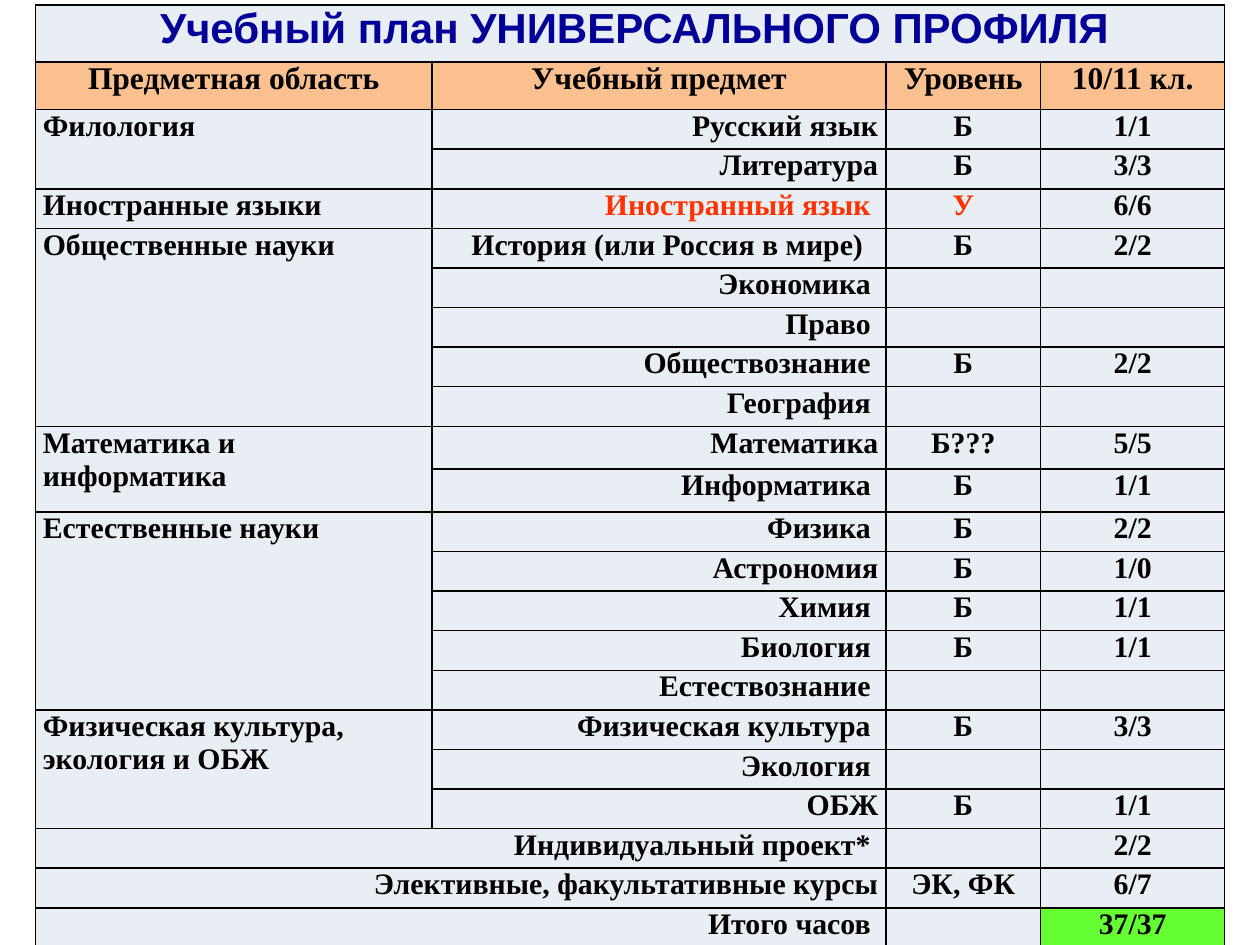
from lxml import etree
from pptx import Presentation
from pptx import util as u
from pptx.dml.color import RGBColor
from pptx.enum import text
from pptx.oxml import ns

BLACK = RGBColor(0x00, 0x00, 0x00)
NAVY = RGBColor(0x00, 0x00, 0x99)
RED = RGBColor(0xFF, 0x33, 0x00)
PALE = RGBColor(0xE9, 0xED, 0xF4)
ORANGE = RGBColor(0xFA, 0xC0, 0x90)
GREEN = RGBColor(0x66, 0xFF, 0x33)
LEFT, CENTER, RIGHT = text.PP_ALIGN.LEFT, text.PP_ALIGN.CENTER, text.PP_ALIGN.RIGHT

TITLE = "Учебный план УНИВЕРСАЛЬНОГО ПРОФИЛЯ"
HEADERS = ["Предметная область", "Учебный предмет", "Уровень", "10/11 кл."]
# Subject area: (subject, level, hours in grades 10/11)
AREAS = {
    "Филология": [("Русский язык", "Б", "1/1"), ("Литература", "Б", "3/3")],
    "Иностранные языки": [("Иностранный язык ", "У", "6/6")],
    "Общественные науки": [
        ("История (или Россия в мире) ", "Б", "2/2"),
        ("Экономика ", "", ""),
        ("Право ", "", ""),
        ("Обществознание ", "Б", "2/2"),
        ("География ", "", ""),
    ],
    "Математика и информатика": [("Математика", "Б???", "5/5"), ("Информатика ", "Б", "1/1")],
    "Естественные науки": [
        ("Физика ", "Б", "2/2"),
        ("Астрономия", "Б", "1/0"),
        ("Химия ", "Б", "1/1"),
        ("Биология ", "Б", "1/1"),
        ("Естествознание ", "", ""),
    ],
    "Физическая культура, экология и ОБЖ": [
        ("Физическая культура ", "Б", "3/3"),
        ("Экология ", "", ""),
        ("ОБЖ", "Б", "1/1"),
    ],
}
TOTALS = [
    ("Индивидуальный проект* ", "", "2/2"),
    ("Элективные, факультативные курсы", "ЭК, ФК", "6/7"),
    ("Итого часов ", "", "37/37"),
]


def style_cell(cell, fill):
    cell.margin_left = cell.margin_right = u.Inches(0.06)
    cell.margin_top = cell.margin_bottom = 0
    tc_pr = cell._tc.get_or_add_tcPr()
    for i, side in enumerate(("lnL", "lnR", "lnT", "lnB")):
        ln = etree.Element(ns.qn("a:" + side), w=str(u.Pt(1)))
        solid = etree.SubElement(ln, ns.qn("a:solidFill"))
        etree.SubElement(solid, ns.qn("a:srgbClr"), val=str(BLACK))
        tc_pr.insert(i, ln)
    cell.fill.solid()
    cell.fill.fore_color.rgb = fill


def write(cell, words, align, size=17, color=BLACK, font="Times New Roman"):
    if not words:
        return
    p = cell.text_frame.paragraphs[0]
    p.text = words
    p.alignment = align
    r = p.runs[0]
    r.font.name = font
    r.font.size = u.Pt(size)
    r.font.bold = True
    r.font.color.rgb = color


prs = Presentation()
prs.slide_width, prs.slide_height = u.Inches(10), u.Inches(7.5)
s = prs.slides.add_slide(prs.slide_layouts[6])

# Table grid: equal rows apart from title, header and mathematics
n_rows = 2 + sum(len(subjects) for subjects in AREAS.values()) + len(TOTALS)
special = {0: 0.45, 1: 0.38, 10: 0.34, 11: 0.34}
height = 7.48
row_height = (height - sum(special.values())) / (n_rows - len(special))
table = s.shapes.add_table(n_rows, 4, u.Inches(0.28), u.Inches(0.04),
                           u.Inches(9.44), u.Inches(height)).table
for col, width in zip(table.columns, (3.15, 3.6, 1.23, 1.46)):
    col.width = u.Inches(width)
for i, row in enumerate(table.rows):
    row.height = u.Inches(special.get(i, row_height))
    for cell in row.cells:
        style_cell(cell, ORANGE if i == 1 else PALE)

# Title and column headers
title = table.cell(0, 0)
title.merge(table.cell(0, 3))
title.margin_left = u.Inches(0.13)
write(title, TITLE, CENTER, 24, NAVY, "Arial")
for c, header in enumerate(HEADERS):
    write(table.cell(1, c), header, CENTER, 18)

# Subjects grouped by area
y = 2
for area, subjects in AREAS.items():
    if len(subjects) > 1:
        table.cell(y, 0).merge(table.cell(y + len(subjects) - 1, 0))
    write(table.cell(y, 0), area, LEFT)
    for subject, level, hours in subjects:
        color = RED if level == "У" else BLACK
        write(table.cell(y, 1), subject, RIGHT, color=color)
        write(table.cell(y, 2), level, CENTER, color=color)
        write(table.cell(y, 3), hours, CENTER)
        if subject.startswith("История"):
            table.cell(y, 1).margin_right = u.Inches(0.12)
        y += 1

# Project, electives and total
for y, (label, level, hours) in enumerate(TOTALS, y):
    table.cell(y, 0).merge(table.cell(y, 1))
    write(table.cell(y, 0), label, RIGHT)
    write(table.cell(y, 2), level, CENTER)
    write(table.cell(y, 3), hours, CENTER)
table.cell(n_rows - 1, 3).fill.fore_color.rgb = GREEN

prs.save("out.pptx")
